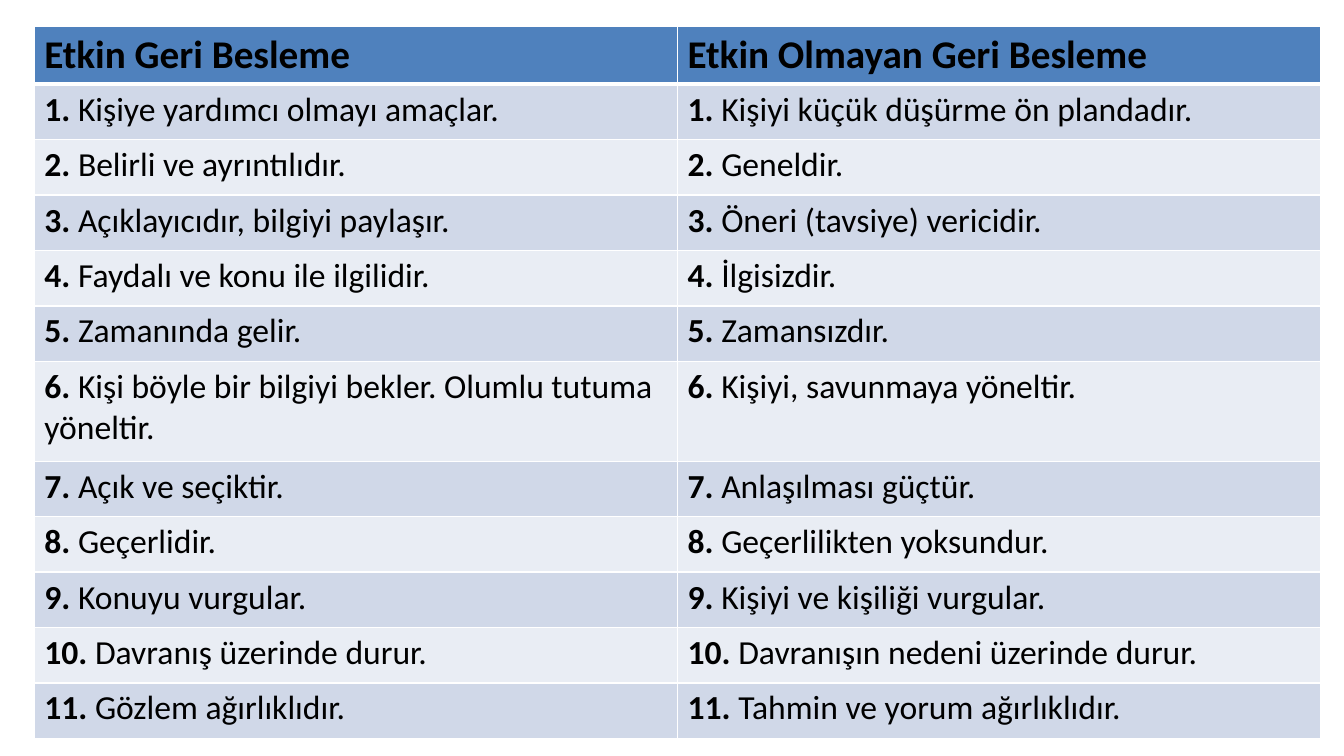
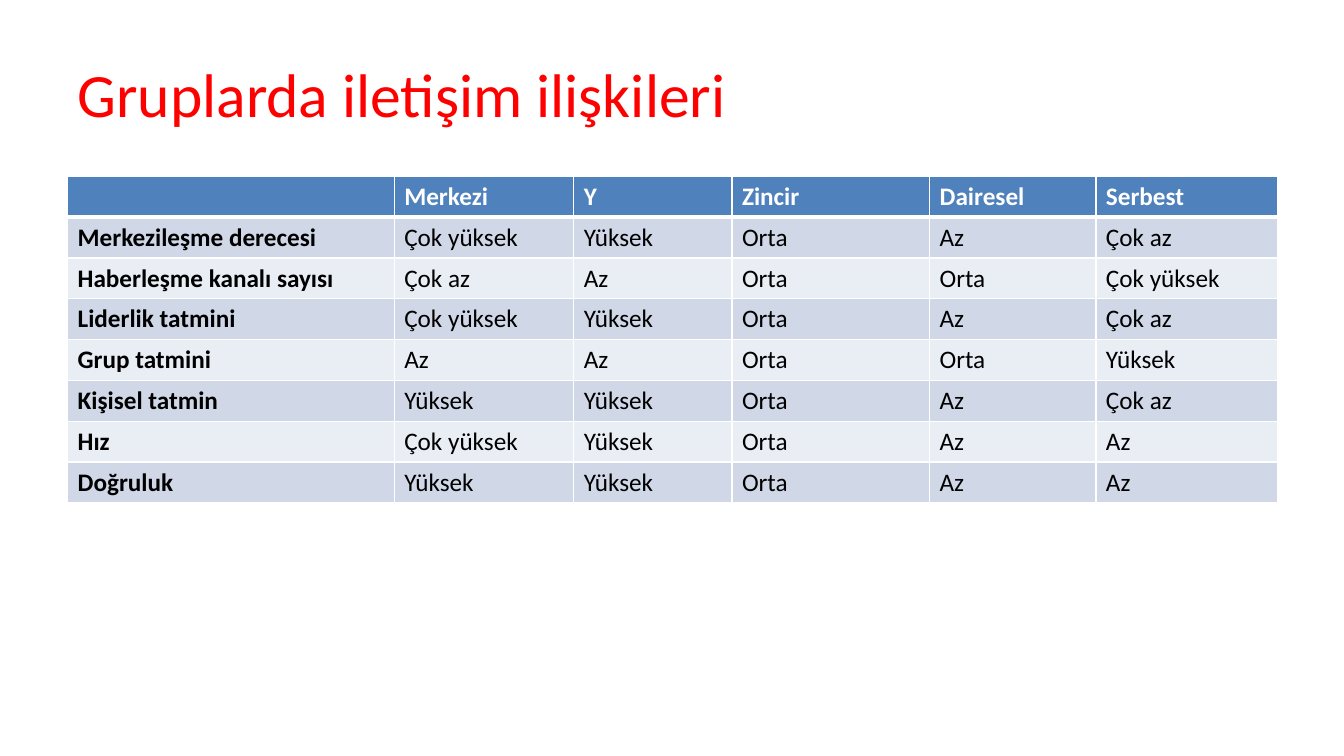
from lxml.etree import SubElement
from pptx import Presentation
from pptx.dml.color import RGBColor
from pptx.enum.text import MSO_ANCHOR
from pptx.oxml.ns import qn
from pptx.util import Inches, Pt

FONT = "Calibri"
BLACK = RGBColor(0x00, 0x00, 0x00)
WHITE = RGBColor(0xFF, 0xFF, 0xFF)
RED = RGBColor(0xFF, 0x00, 0x00)
HEADER_BLUE = RGBColor(0x4F, 0x81, 0xBD)
BANDS = (RGBColor(0xD0, 0xD8, 0xE8), RGBColor(0xE9, 0xED, 0xF4))

FEEDBACK_HEADER = ("Etkin Geri Besleme", "Etkin Olmayan Geri Besleme")
FEEDBACK = [
    ("Kişiye yardımcı olmayı amaçlar.", "Kişiyi küçük düşürme ön plandadır."),
    ("Belirli ve ayrıntılıdır.", "Geneldir."),
    ("Açıklayıcıdır, bilgiyi paylaşır.", "Öneri (tavsiye) vericidir."),
    ("Faydalı ve konu ile ilgilidir.", "İlgisizdir."),
    ("Zamanında gelir.", "Zamansızdır."),
    ("Kişi böyle bir bilgiyi bekler. Olumlu tutuma yöneltir.", "Kişiyi, savunmaya yöneltir."),
    ("Açık ve seçiktir.", "Anlaşılması güçtür."),
    ("Geçerlidir.", "Geçerlilikten yoksundur."),
    ("Konuyu vurgular.", "Kişiyi ve kişiliği vurgular."),
    ("Davranış üzerinde durur.", "Davranışın nedeni üzerinde durur."),
    ("Gözlem ağırlıklıdır.", "Tahmin ve yorum ağırlıklıdır."),
]
FEEDBACK_HEIGHTS = [0.55] * 6 + [0.99] + [0.55] * 5

GROUP_TITLE = "Gruplarda iletişim ilişkileri"
GROUP_HEADER = ("", "Merkezi", "Y", "Zincir", "Dairesel", "Serbest")
GROUPS = [
    ("Merkezileşme derecesi", "Çok yüksek", "Yüksek", "Orta", "Az", "Çok az"),
    ("Haberleşme kanalı sayısı", "Çok az", "Az", "Orta", "Orta", "Çok yüksek"),
    ("Liderlik tatmini", "Çok yüksek", "Yüksek", "Orta", "Az", "Çok az"),
    ("Grup tatmini", "Az", "Az", "Orta", "Orta", "Yüksek"),
    ("Kişisel tatmin", "Yüksek", "Yüksek", "Orta", "Az", "Çok az"),
    ("Hız", "Çok yüksek", "Yüksek", "Orta", "Az", "Az"),
    ("Doğruluk", "Yüksek", "Yüksek", "Orta", "Az", "Az"),
]
GROUP_WIDTHS = [3.24, 1.78, 1.57, 1.96, 1.65, 1.8]


def style_font(font, size, color, bold=False):
    font.name, font.size, font.bold = FONT, Pt(size), bold
    font.color.rgb = color


def add_borders(cell, row):
    properties = cell._tc.get_or_add_tcPr()
    widths = {"L": 1, "R": 1, "T": 3 if row == 1 else 1, "B": 3 if row == 0 else 1}
    for side, width in widths.items():
        line = SubElement(properties, qn(f"a:ln{side}"), w=str(Pt(width)))
        fill = SubElement(line, qn("a:solidFill"))
        SubElement(fill, qn("a:srgbClr"), val=str(WHITE))


def add_banded_table(slide, left, top, widths, heights):
    frame = slide.shapes.add_table(len(heights), len(widths), Inches(left), Inches(top),
                                   Inches(sum(widths)), Inches(sum(heights)))
    table = frame.table
    for column, width in zip(table.columns, widths):
        column.width = Inches(width)
    for index, (row, height) in enumerate(zip(table.rows, heights)):
        row.height = Inches(height)
        for cell in row.cells:
            add_borders(cell, index)
            cell.fill.solid()
            cell.fill.fore_color.rgb = BANDS[(index - 1) % 2] if index else HEADER_BLUE
    return table


def write_cell(cell, text, size, color=BLACK, bold=False):
    paragraph = cell.text_frame.paragraphs[0]
    style_font(paragraph.font, size, color, bold)
    if text:
        paragraph.add_run().text = text
    return paragraph


def build_feedback_slide(slide):
    table = add_banded_table(slide, 0.34, 0.26, [6.38, 6.38], FEEDBACK_HEIGHTS)
    for column, heading in enumerate(FEEDBACK_HEADER):
        write_cell(table.cell(0, column), heading, 28, bold=True)
    for number, pair in enumerate(FEEDBACK, 1):
        for column, text in enumerate(pair):
            paragraph = write_cell(table.cell(number, column), f"{number}. ", 24)
            paragraph.runs[0].font.bold = True
            paragraph.add_run().text = text


def build_group_slide(slide):
    title = slide.shapes.add_textbox(Inches(0.67), Inches(0.3), Inches(12), Inches(1.25))
    title.text_frame.word_wrap = True
    title.text_frame.vertical_anchor = MSO_ANCHOR.MIDDLE
    paragraph = title.text_frame.paragraphs[0]
    paragraph.text = GROUP_TITLE
    style_font(paragraph.font, 44, RED)

    table = add_banded_table(slide, 0.67, 1.75, GROUP_WIDTHS, [0.405] * (len(GROUPS) + 1))
    for column, heading in enumerate(GROUP_HEADER):
        write_cell(table.cell(0, column), heading, 18, WHITE, True)
    for row, values in enumerate(GROUPS, 1):
        for column, text in enumerate(values):
            write_cell(table.cell(row, column), text, 18, bold=column == 0)


def main():
    """Build the feedback and group communication slides."""
    presentation = Presentation()
    presentation.slide_width, presentation.slide_height = Inches(13.33), Inches(7.5)
    for build in (build_feedback_slide, build_group_slide):
        build(presentation.slides.add_slide(presentation.slide_layouts[6]))
    presentation.save("out.pptx")


if __name__ == "__main__":
    main()
